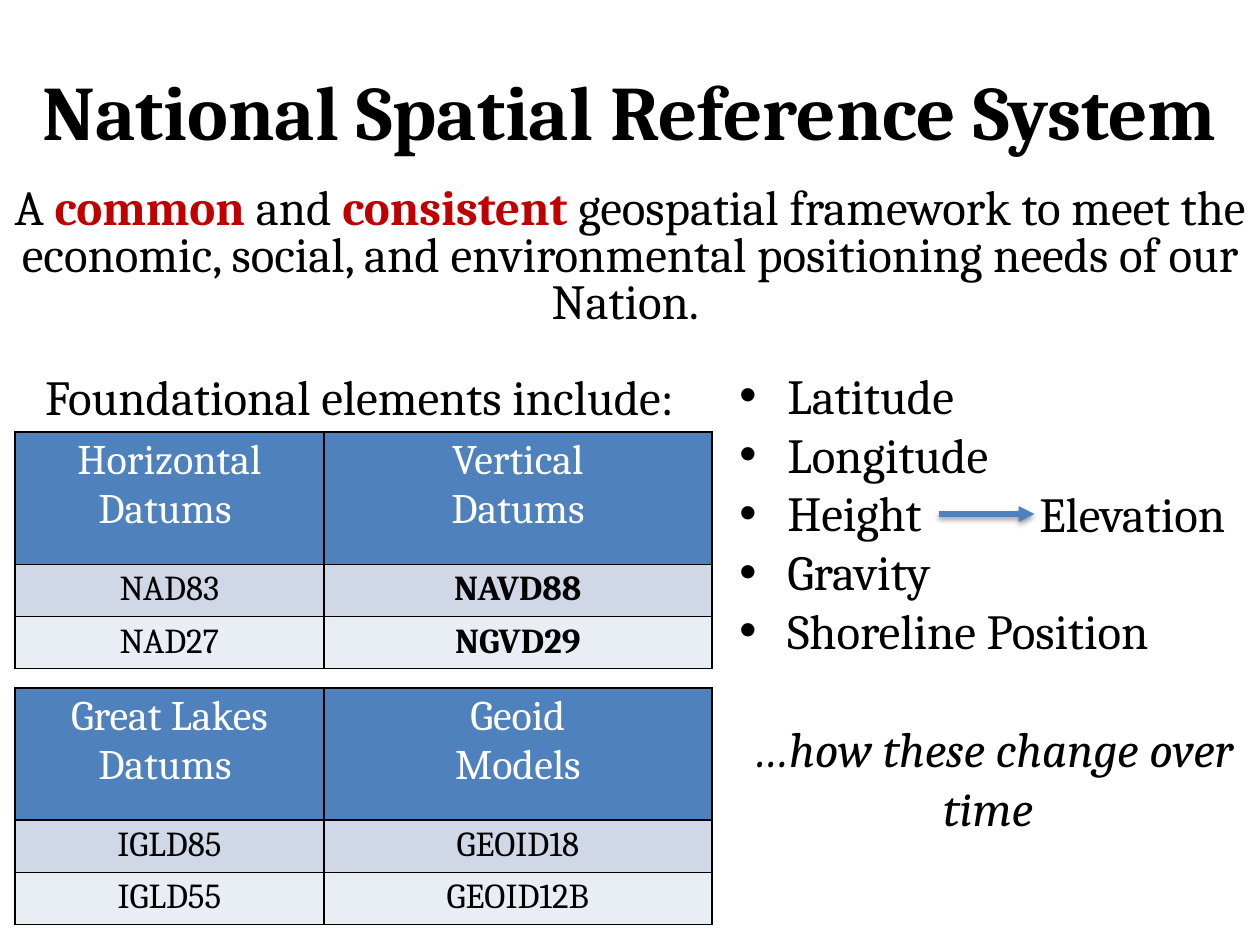
from dataclasses import dataclass

from lxml.etree import SubElement
from pptx import Presentation
from pptx.dml.color import RGBColor
from pptx.enum.shapes import MSO_CONNECTOR
from pptx.enum.text import MSO_ANCHOR, PP_ALIGN
from pptx.oxml.ns import qn
from pptx.util import Inches, Pt


@dataclass(frozen=True)
class Theme:
    font: str = "Cambria"
    black: str = "000000"
    white: str = "FFFFFF"
    red: str = "C00000"
    blue: str = "4F81BD"
    bands: tuple = ("D0D8E8", "E9EDF4")
    title: int = 44
    body: int = 28
    head: int = 24
    cell: int = 20


THEME = Theme()


def color(code):
    return RGBColor.from_string(code)


def write(para, text, size=THEME.body, ink=THEME.black, bold=False,
          italic=False, align=PP_ALIGN.LEFT, line=None, before=0):
    """Add one run to a paragraph and set the paragraph's format."""
    para.alignment = align
    if line:
        para.line_spacing = line
    para.space_before = Pt(before)
    run = para.add_run()
    run.text = text
    font = run.font
    font.name, font.size = THEME.font, Pt(size)
    font.bold, font.italic = bold, italic
    font.color.rgb = color(ink)


def indent(para, left, hang=0, mark=None):
    props = para._p.get_or_add_pPr()
    props.set("marL", str(Inches(left)))
    props.set("indent", str(-Inches(hang)))
    if mark:
        SubElement(props, qn("a:buFont"), typeface="Arial")
        SubElement(props, qn("a:buChar"), char=mark)


def border(cell, ink, width=1):
    props = cell._tc.get_or_add_tcPr()
    for side in ("lnL", "lnR", "lnT", "lnB"):
        edge = SubElement(props, qn(f"a:{side}"), w=str(Pt(width)))
        fill = SubElement(edge, qn("a:solidFill"))
        SubElement(fill, qn("a:srgbClr"), val=ink)


class Page:
    def __init__(self, slide, theme):
        self.slide, self.theme = slide, theme

    def box(self, left, top, width, height, anchor=MSO_ANCHOR.TOP):
        shape = self.slide.shapes.add_textbox(
            Inches(left), Inches(top), Inches(width), Inches(height))
        frame = shape.text_frame
        frame.word_wrap = True
        frame.vertical_anchor = anchor
        return frame

    def table(self, left, top, cols, rows, data):
        grid = self.slide.shapes.add_table(
            len(rows), len(cols), Inches(left), Inches(top),
            Inches(sum(cols)), Inches(sum(rows))).table
        for col, width in zip(grid.columns, cols):
            col.width = Inches(width)
        for r, (height, texts) in enumerate(zip(rows, data)):
            grid.rows[r].height = Inches(height)
            for c, text in enumerate(texts):
                self.cell(grid.cell(r, c), text, r)

    def cell(self, cell, text, row):
        """Fill one cell; a leading * makes its text bold."""
        look = self.theme
        cell.margin_left = cell.margin_right = Inches(0.08)
        cell.margin_top = cell.margin_bottom = Inches(0.04)
        border(cell, look.black)
        cell.fill.solid()
        cell.fill.fore_color.rgb = color(
            look.bands[(row - 1) % 2] if row else look.blue)
        frame = cell.text_frame
        for i, part in enumerate(text.lstrip("*").split("\n")):
            para = frame.add_paragraph() if i else frame.paragraphs[0]
            write(para, part, size=look.cell if row else look.head,
                  ink=look.black if row else look.white,
                  bold=text.startswith("*"), align=PP_ALIGN.CENTER)

    def arrow(self, x1, y1, x2, y2, width=3):
        line = self.slide.shapes.add_connector(
            MSO_CONNECTOR.STRAIGHT,
            Inches(x1), Inches(y1), Inches(x2), Inches(y2))
        line.line.color.rgb = color(self.theme.blue)
        line.line.width = Pt(width)
        SubElement(line.line._get_or_add_ln(), qn("a:tailEnd"),
                   type="triangle")
        props = line._element.spPr
        effect = SubElement(props, qn("a:effectLst"))
        shade = SubElement(effect, qn("a:outerShdw"), blurRad=str(Pt(3.1)),
                           dist=str(Pt(1.6)), dir="5400000", rotWithShape="0")
        tone = SubElement(shade, qn("a:srgbClr"), val=self.theme.black)
        SubElement(tone, qn("a:alpha"), val="38000")


def main():
    deck = Presentation()
    deck.slide_width, deck.slide_height = Inches(10), Inches(7.5)
    page = Page(deck.slides.add_slide(deck.slide_layouts[6]), THEME)
    mid = PP_ALIGN.CENTER

    title = page.box(0, 0.19, 10, 1.45, MSO_ANCHOR.MIDDLE)
    write(title.paragraphs[0], "National Spatial Reference System",
          size=THEME.title, bold=True, align=mid, line=0.9)

    intro = page.box(0, 1.44, 10, 2.14)
    for text, strong in (
            ("A ", False), ("common", True), (" and ", False),
            ("consistent ", True),
            ("geospatial framework to meet the economic, social, and "
             "environmental positioning needs of our Nation. ", False)):
        write(intro.paragraphs[0], text, bold=strong, align=mid, line=0.8,
              ink=THEME.red if strong else THEME.black)
    lead = intro.add_paragraph()
    indent(lead, 0.26)
    write(lead, "Foundational elements include:", line=0.8, before=28)

    parts = page.box(5.77, 2.85, 4.23, 3.87)
    names = ("Latitude", "Longitude", "Height", "Gravity",
             "Shoreline Position")
    for i, name in enumerate(names):
        para = parts.add_paragraph() if i else parts.paragraphs[0]
        indent(para, 0.38, 0.38, "•")
        write(para, name)
    write(parts.add_paragraph(), "…how these change over time ",
          italic=True, align=mid, before=34)

    datums = (("Horizontal\nDatums ", "Vertical\nDatums"),
              ("NAD83", "*NAVD88"), ("NAD27", "*NGVD29"))
    models = (("Great Lakes\nDatums ", "Geoid\nModels"),
              ("IGLD85", "GEOID18"), ("IGLD55", "GEOID12B"))
    for top, data in ((3.43, datums), (5.46, models)):
        page.table(0.12, top, (2.45, 3.08), (1.05, 0.39, 0.39), data)

    write(page.box(8.15, 3.79, 2.27, 0.57).paragraphs[0], "Elevation")
    page.arrow(7.45, 4.08, 8.21, 4.08)
    deck.save("out.pptx")


if __name__ == "__main__":
    main()
